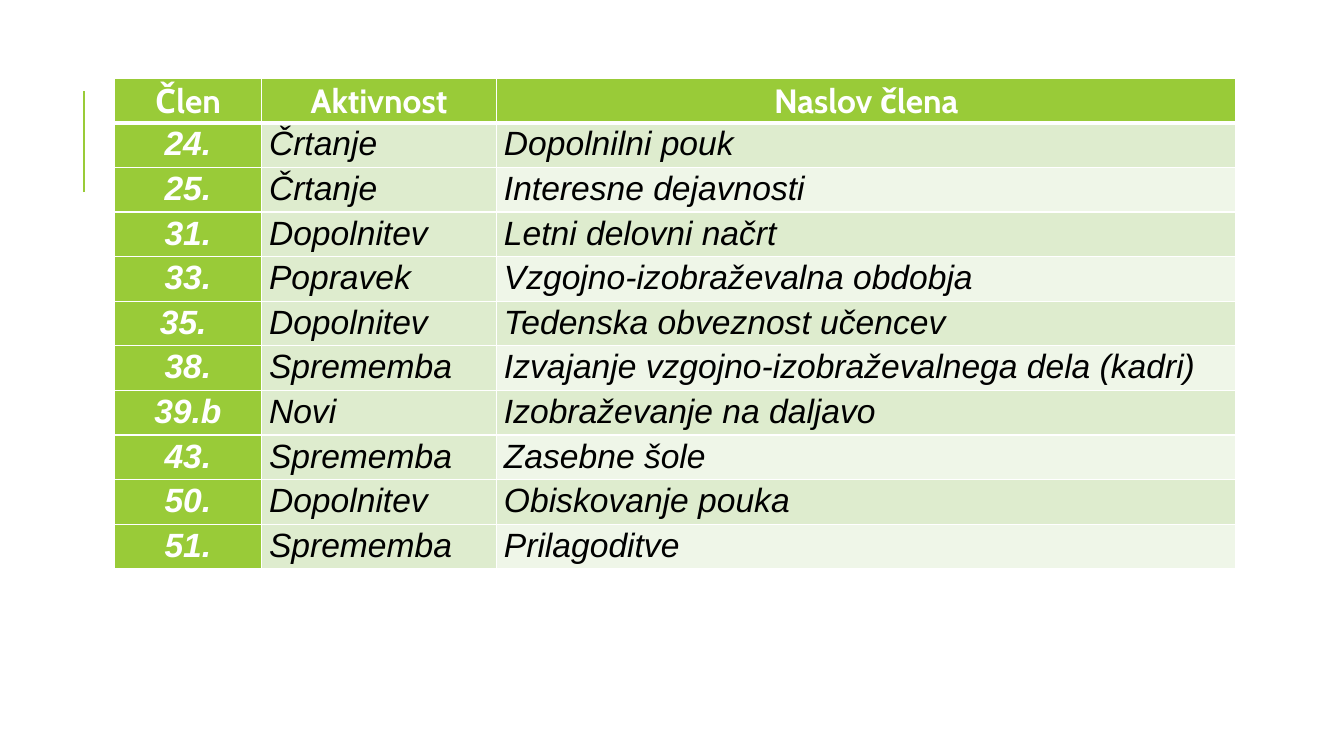
from lxml.etree import SubElement
from pptx import Presentation
from pptx.dml.color import RGBColor
from pptx.enum.shapes import MSO_CONNECTOR as Connector
from pptx.enum.text import PP_ALIGN as Align
from pptx.oxml.ns import qn
from pptx.util import Cm, Pt

COLORS = {
    "green": "99CB38",
    "band": "DEECCE",
    "pale": "EFF6E8",
    "white": "FFFFFF",
    "black": "000000",
}
HEADINGS = ["Člen", "Aktivnost", "Naslov člena"]
ARTICLES = [
    ("24.", "Črtanje", "Dopolnilni pouk"),
    ("25.", "Črtanje", "Interesne dejavnosti"),
    ("31.", "Dopolnitev", "Letni delovni načrt"),
    ("33.", "Popravek", "Vzgojno-izobraževalna obdobja"),
    ("35. ", "Dopolnitev", "Tedenska obveznost učencev"),
    ("38.", "Sprememba", "Izvajanje vzgojno-izobraževalnega dela (kadri)"),
    ("39.b", "Novi", "Izobraževanje na daljavo"),
    ("43.", "Sprememba", "Zasebne šole"),
    ("50.", "Dopolnitev", "Obiskovanje pouka"),
    ("51.", "Sprememba", "Prilagoditve"),
]
COLUMN_WIDTHS = [3.71, 5.92, 18.64]
COLUMN_ALIGNS = [Align.CENTER, Align.JUSTIFY, Align.LEFT]


def write_text(cell, text, font="Arial", color="black", bold=False, italic=True, align=Align.LEFT):
    para = cell.text_frame.paragraphs[0]
    para.alignment = align
    para.line_spacing = 1.07
    span = para.add_run()
    span.text = text
    span.font.name = font
    span.font.size = Pt(24)
    span.font.bold = bold
    span.font.italic = italic
    span.font.color.rgb = RGBColor.from_string(COLORS[color])


def draw_borders(cell, **widths):
    properties = cell._tc.get_or_add_tcPr()
    for position, side in enumerate("LRTB"):
        border = SubElement(properties, qn(f"a:ln{side}"), w=str(Pt(widths.get(side, 1))))
        fill = SubElement(border, qn("a:solidFill"))
        SubElement(fill, qn("a:srgbClr"), val=COLORS["white"])
        properties.insert(position, border)


deck = Presentation()
deck.slide_width, deck.slide_height = Cm(33.87), Cm(19.05)
page = deck.slides.add_slide(deck.slide_layouts[6])

accent = page.shapes.add_connector(Connector.STRAIGHT, Cm(2.12), Cm(4.84), Cm(2.12), Cm(2.29))
accent.line.color.rgb = RGBColor.from_string(COLORS["green"])
accent.line.width = Pt(1.5)
SubElement(accent._element.spPr, qn("a:effectLst"))

rows = [HEADINGS, *ARTICLES]
table = page.shapes.add_table(
    len(rows), len(HEADINGS), Cm(2.88), Cm(1.97), Cm(sum(COLUMN_WIDTHS)), Cm(12.37)
).table
for column, width in zip(table.columns, COLUMN_WIDTHS):
    column.width = Cm(width)

for row_number, row in enumerate(rows):
    for column_number, text in enumerate(row):
        cell = table.cell(row_number, column_number)
        cell.margin_left = cell.margin_right = Cm(0.19)
        cell.margin_top = cell.margin_bottom = 0
        is_heading = row_number == 0
        is_green = is_heading or column_number == 0
        is_pale = column_number == 2 and row_number % 2 == 0
        fill = "green" if is_green else "pale" if is_pale else "band"
        cell.fill.solid()
        cell.fill.fore_color.rgb = RGBColor.from_string(COLORS[fill])
        draw_borders(cell, T=3 if row_number == 1 else 1, B=3 if is_heading else 1)
        write_text(
            cell,
            text,
            font="Cabin" if is_heading else "Arial",
            color="white" if is_green else "black",
            bold=is_green,
            italic=not is_heading,
            align=Align.CENTER if is_heading else COLUMN_ALIGNS[column_number],
        )

deck.save("out.pptx")
